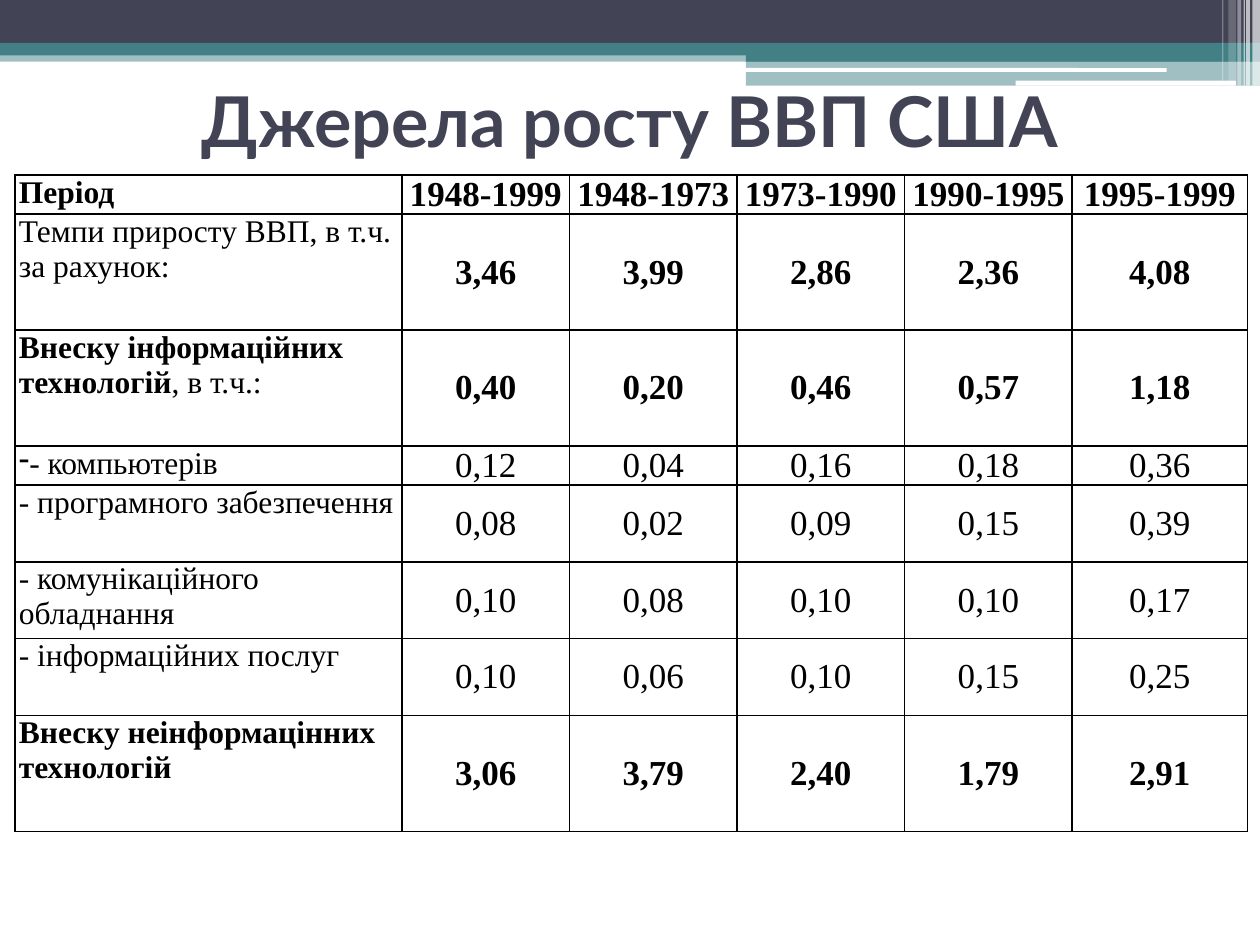
import pptx
import pptx.util
import pptx.dml.color
import pptx.enum.shapes
import pptx.enum.text
import pptx.oxml
import pptx.oxml.ns
from pptx.util import Inches

DARK, TEAL, WHITE, BLACK = "424456", "438086", "FFFFFF", "000000"
TABLE_FONT = "Times New Roman"

BANDS = [
    (0, 0.4, 10, 0.09, TEAL, 50),
    (0, 0, 10, 0.34, DARK, 100),
    (0, 0.34, 10, 0.1, TEAL, 100),
    (5.92, 0.39, 4.08, 0.1, TEAL, 100),
    (5.92, 0.48, 4.08, 0.2, TEAL, 50),
]
PILLS = [(5.91, 0.54, 3.35, 0.03), (8.06, 0.64, 1.75, 0.04)]
STRIPES = [
    (9.94, 0.06, 0.68, 65),
    (9.89, 0.03, 0.68, 65),
    (9.87, 0.01, 0.68, 60),
    (9.82, 0.03, 0.68, 40),
    (9.75, 0.06, 0.64, 20),
    (9.7, 0.01, 0.64, 30),
]

COLUMN_WIDTHS = [3.07, 1.33, 1.33, 1.33, 1.33, 1.39]
ROWS = [
    (0.31, [("Період", True)], "1948-1999 1948-1973 1973-1990 1990-1995 1995-1999", True),
    (0.92, [("Темпи приросту ВВП, в т.ч. за рахунок:", False)], "3,46 3,99 2,86 2,36 4,08", True),
    (0.92, [("Внеску інформаційних технологій", True), (", в т.ч.:", False)],
     "0,40 0,20 0,46 0,57 1,18", True),
    (0.31, [("- компьютерів", False)], "0,12 0,04 0,16 0,18 0,36", False),
    (0.61, [("- програмного забезпечення", False)], "0,08 0,02 0,09 0,15 0,39", False),
    (0.61, [("- комунікаційного обладнання", False)], "0,10 0,08 0,10 0,10 0,17", False),
    (0.61, [("- інформаційних послуг", False)], "0,10 0,06 0,10 0,15 0,25", False),
    (0.92, [("Внеску неінформацінних технологій", True)], "3,06 3,79 2,40 1,79 2,91", True),
]
BULLETED_ROW = 3


def paint(fill, color):
    """Fill with a solid colour."""
    fill.solid()
    fill.fore_color.rgb = pptx.dml.color.RGBColor.from_string(color)


def add_span(para, text, font, size, bold, color):
    """Append one formatted run to a paragraph."""
    span = para.add_run()
    span.text = text
    span.font.name = font
    span.font.size = pptx.util.Pt(size)
    span.font.bold = bold
    span.font.color.rgb = pptx.dml.color.RGBColor.from_string(color)


def add_block(page, left, top, width, height, color, opacity=100, rounded=False):
    """Draw one flat, borderless block of the header."""
    kinds = pptx.enum.shapes.MSO_SHAPE
    kind = kinds.ROUNDED_RECTANGLE if rounded else kinds.RECTANGLE
    block = page.shapes.add_shape(kind, Inches(left), Inches(top), Inches(width), Inches(height))
    block.shadow.inherit = False
    block.line.fill.background()
    paint(block.fill, color)
    if opacity < 100:
        tint = block.fill._xPr.find(".//" + pptx.oxml.ns.qn("a:srgbClr"))
        alpha = pptx.oxml.parse_xml(f'<a:alpha {pptx.oxml.ns.nsdecls("a")} val="{opacity * 1000}"/>')
        tint.append(alpha)


def add_header(page):
    """Draw the bands, pills and stripes along the top."""
    for band in BANDS:
        add_block(page, *band)
    for pill in PILLS:
        add_block(page, *pill, WHITE, rounded=True)
    for left, width, height, opacity in STRIPES:
        add_block(page, left, 0, width, height, WHITE, opacity)


def add_title(page, text):
    """Place and format the slide title."""
    box = page.shapes.title
    box.left, box.top, box.width, box.height = Inches(0.5), Inches(0.36), Inches(9), Inches(1.17)
    box.text_frame.vertical_anchor = pptx.enum.text.MSO_ANCHOR.MIDDLE
    para = box.text_frame.paragraphs[0]
    para.alignment = pptx.enum.text.PP_ALIGN.CENTER
    add_span(para, text, "Lato", 40, True, DARK)


def add_borders(cell):
    """Give a cell thin black lines on all four sides."""
    properties = cell._tc.get_or_add_tcPr()
    for index, side in enumerate("LRTB"):
        line = pptx.oxml.parse_xml(
            f'<a:ln{side} {pptx.oxml.ns.nsdecls("a")} w="12700">'
            f'<a:solidFill><a:srgbClr val="{BLACK}"/></a:solidFill></a:ln{side}>')
        properties.insert(index, line)


def add_bullet(para, mark):
    """Put a bullet mark directly before the text."""
    properties = para._p.get_or_add_pPr()
    properties.set("marL", "0")
    properties.set("indent", "0")
    properties.append(pptx.oxml.parse_xml(
        f'<a:buChar {pptx.oxml.ns.nsdecls("a")} char="{mark}"/>'))


def fill_cell(cell, spans, size, centred=False, middle=False):
    """Format a table cell and write its runs."""
    paint(cell.fill, WHITE)
    add_borders(cell)
    cell.margin_left = cell.margin_right = Inches(0.03)
    cell.margin_top = cell.margin_bottom = 0
    anchors = pptx.enum.text.MSO_ANCHOR
    cell.vertical_anchor = anchors.MIDDLE if middle else anchors.TOP
    para = cell.text_frame.paragraphs[0]
    aligns = pptx.enum.text.PP_ALIGN
    para.alignment = aligns.CENTER if centred else aligns.LEFT
    for text, bold in spans:
        add_span(para, text, TABLE_FONT, size, bold, BLACK)


def add_growth_table(page):
    """Add the table of growth sources by period."""
    frame = page.shapes.add_table(
        len(ROWS), len(COLUMN_WIDTHS), Inches(0.12), Inches(1.39),
        Inches(sum(COLUMN_WIDTHS)), Inches(sum(row[0] for row in ROWS)))
    table = frame.table
    table.first_row = table.horz_banding = False
    for column, width in zip(table.columns, COLUMN_WIDTHS):
        column.width = Inches(width)
    for row_index, (height, label, values, bold) in enumerate(ROWS):
        table.rows[row_index].height = Inches(height)
        fill_cell(table.cell(row_index, 0), label, 18)
        for column_index, value in enumerate(values.split(), start=1):
            fill_cell(table.cell(row_index, column_index), [(value, bold)], 20,
                      centred=True, middle=row_index > 0)
    add_bullet(table.cell(BULLETED_ROW, 0).text_frame.paragraphs[0], "-")


def main():
    """Build and save the slide."""
    deck = pptx.Presentation()
    deck.slide_width, deck.slide_height = Inches(10), Inches(7.5)
    page = deck.slides.add_slide(deck.slide_layouts[5])
    paint(page.background.fill, WHITE)
    add_header(page)
    add_title(page, "Джерела росту ВВП США")
    add_growth_table(page)
    deck.save("out.pptx")


if __name__ == "__main__":
    main()
